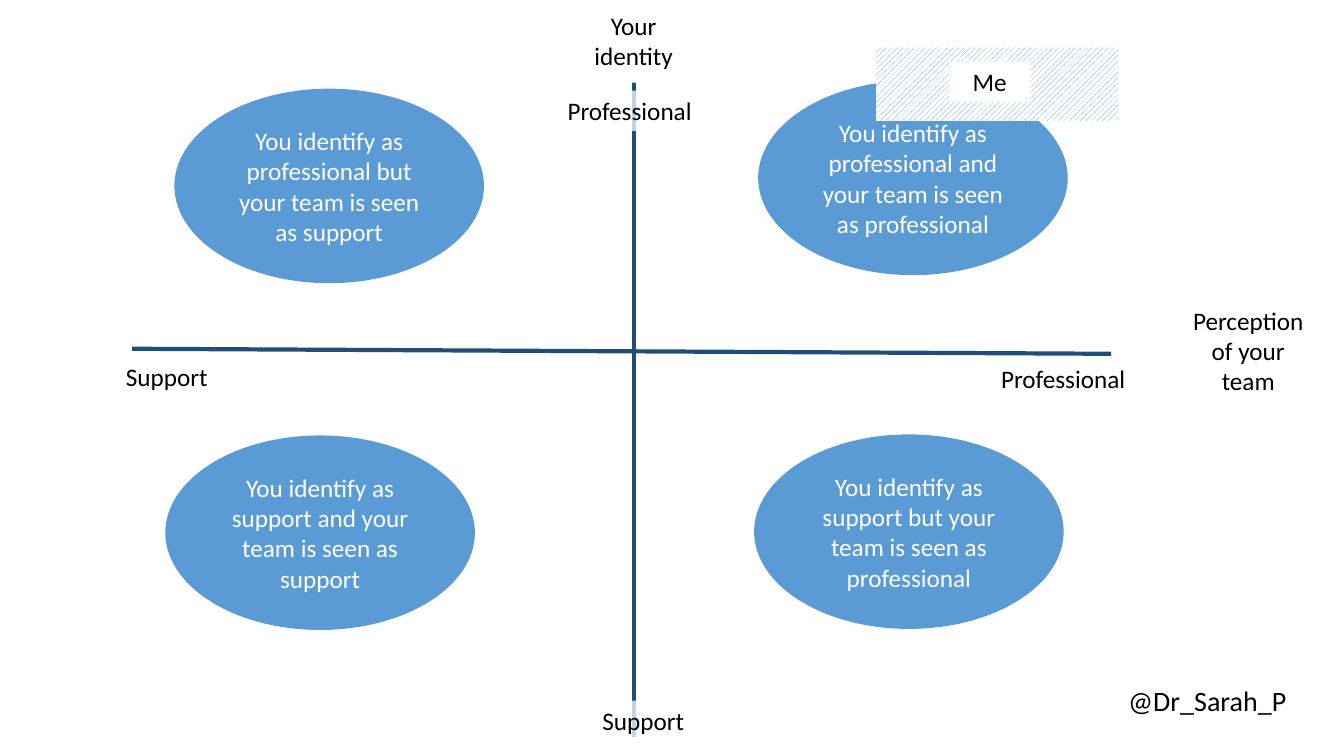
from dataclasses import dataclass

from lxml import etree
from pptx import Presentation
from pptx.dml.color import RGBColor
from pptx.enum.dml import MSO_PATTERN
from pptx.enum.shapes import MSO_CONNECTOR, MSO_SHAPE
from pptx.enum.text import MSO_ANCHOR, MSO_AUTO_SIZE, PP_ALIGN
from pptx.oxml.ns import qn
from pptx.shapes.autoshape import Shape
from pptx.slide import Slide
from pptx.util import Inches, Pt

FONT = "Calibri"
BLACK, WHITE, BLUE, NAVY = "000000", "FFFFFF", "5B9BD5", "1F4E79"


@dataclass(frozen=True)
class Axis:
    start: tuple[float, float]
    end: tuple[float, float]


@dataclass(frozen=True)
class Label:
    text: str
    left: float
    top: float
    width: float
    height: float = 0.4
    opacity: int = 75


@dataclass(frozen=True)
class Oval:
    text: str
    left: float
    top: float
    width: float = 3.07
    height: float = 1.93
    fill: str = BLUE
    color: str = WHITE


AXES = [Axis((1.31, 3.46), (11.02, 3.51)), Axis((6.29, 0.47), (6.29, 7.31))]

AXIS_ENDS = [
    Label("Professional", 9.71, 3.56, 1.67),
    Label("Support", 1.07, 3.54, 1.17),
    Label("Support", 5.73, 6.95, 1.3),
    Label("Professional", 5.46, 0.9, 1.57),
]

QUADRANTS = [
    Oval("You identify as professional and your team is seen as professional", 7.52, 0.8),
    Oval("You identify as support and your team is seen as support", 1.64, 4.32),
    Oval("You identify as professional but your team is seen as support", 1.73, 0.88),
    Oval("You identify as support but your team is seen as professional", 7.48, 4.31),
]

AXIS_TITLES = [
    Oval("Your identity", 5.41, -0.01, 1.75, 0.83, WHITE, BLACK),
    Oval("Perception of your team", 11.42, 2.98, 1.92, 0.99, WHITE, BLACK),
]

ME = Label("Me", 9.41, 0.61, 0.81, opacity=100)


def rgb(value: str) -> RGBColor:
    return RGBColor.from_string(value)


def write(box: Shape, text: str, color: str = BLACK, size: int = 18,
          align: PP_ALIGN = PP_ALIGN.CENTER, anchor: MSO_ANCHOR = MSO_ANCHOR.TOP) -> None:
    frame = box.text_frame
    frame.word_wrap = True
    frame.vertical_anchor = anchor
    frame.text = text
    para = frame.paragraphs[0]
    para.alignment = align
    span = para.runs[0]
    span.font.name = FONT
    span.font.size = Pt(size)
    span.font.color.rgb = rgb(color)


def add_plain(page: Slide, kind: MSO_SHAPE, left: float, top: float,
              width: float, height: float) -> Shape:
    shape = page.shapes.add_shape(kind, Inches(left), Inches(top), Inches(width), Inches(height))
    shape.shadow.inherit = False
    shape.line.fill.background()
    return shape


def draw_axis(page: Slide, axis: Axis) -> None:
    points = [Inches(value) for value in (*axis.start, *axis.end)]
    line = page.shapes.add_connector(MSO_CONNECTOR.STRAIGHT, *points)
    line.line.color.rgb = rgb(NAVY)
    line.line.width = Pt(3)
    etree.SubElement(line.element.spPr, qn("a:effectLst"))


def draw_label(page: Slide, label: Label) -> None:
    box = add_plain(page, MSO_SHAPE.RECTANGLE, label.left, label.top, label.width, label.height)
    box.fill.solid()
    box.fill.fore_color.rgb = rgb(WHITE)
    if label.opacity < 100:
        color = box.element.spPr.find(qn("a:solidFill")).find(qn("a:srgbClr"))
        etree.SubElement(color, qn("a:alpha"), val=str(label.opacity * 1000))
    write(box, label.text)
    box.text_frame.auto_size = MSO_AUTO_SIZE.SHAPE_TO_FIT_TEXT


def draw_oval(page: Slide, oval: Oval) -> None:
    shape = add_plain(page, MSO_SHAPE.OVAL, oval.left, oval.top, oval.width, oval.height)
    shape.fill.solid()
    shape.fill.fore_color.rgb = rgb(oval.fill)
    write(shape, oval.text, oval.color, anchor=MSO_ANCHOR.MIDDLE)


def draw_hatching(page: Slide) -> None:
    shape = add_plain(page, MSO_SHAPE.RECTANGLE, 8.69, 0.47, 2.4, 0.73)
    shape.fill.patterned()
    shape.fill.pattern = MSO_PATTERN.WIDE_UPWARD_DIAGONAL
    shape.fill.fore_color.rgb = rgb(BLUE)
    shape.fill.back_color.rgb = rgb(WHITE)


def draw_handle(page: Slide) -> None:
    box = page.shapes.add_textbox(Inches(11.09), Inches(6.73), Inches(1.98), Inches(0.44))
    write(box, "@Dr_Sarah_P", size=20, align=PP_ALIGN.LEFT)
    box.text_frame.auto_size = MSO_AUTO_SIZE.SHAPE_TO_FIT_TEXT


def main() -> None:
    deck = Presentation()
    deck.slide_width, deck.slide_height = Inches(13.33), Inches(7.5)
    page = deck.slides.add_slide(deck.slide_layouts[6])

    # Axes and the labels at their ends
    for axis in AXES:
        draw_axis(page, axis)
    for label in AXIS_ENDS:
        draw_label(page, label)

    # Quadrants, with the marked area over the top right one
    for oval in QUADRANTS:
        draw_oval(page, oval)
    draw_hatching(page)
    draw_label(page, ME)

    # Axis titles and author handle
    for oval in AXIS_TITLES:
        draw_oval(page, oval)
    draw_handle(page)

    deck.save("out.pptx")


if __name__ == "__main__":
    main()
